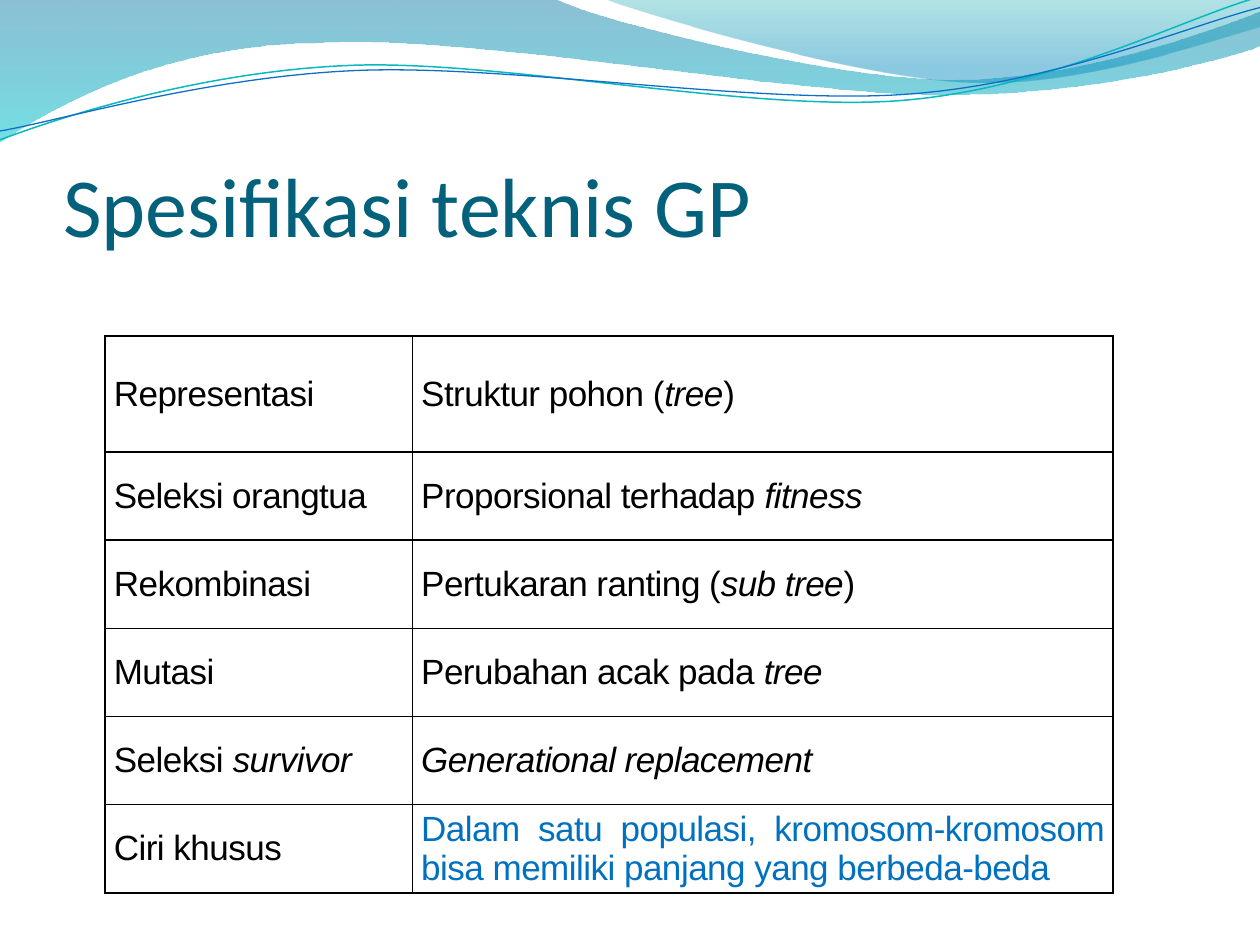
from lxml import etree
from pptx import Presentation
from pptx import util as u
from pptx.dml.color import RGBColor
from pptx.enum import text
from pptx.oxml import ns

TITLE = "Spesifikasi teknis GP"
BLACK = RGBColor(0, 0, 0)
BLUE = RGBColor(0x00, 0x70, 0xC0)
TITLE_TEAL = RGBColor(0x04, 0x61, 0x7B)
DEEP_BLUE = RGBColor(0x00, 0x74, 0xA1)
AQUA = RGBColor(0x00, 0xC6, 0xCF)
SEA_GREEN = RGBColor(0x00, 0xA1, 0xA9)
SKY_BLUE = RGBColor(0x00, 0x8B, 0xBF)
LINE_TEAL = RGBColor(0x0A, 0xB8, 0xBF)
LINE_BLUE = RGBColor(0x0F, 0x6F, 0xC6)

ROWS = [
    ("Representasi", "Struktur pohon (*tree*) ", BLACK),
    ("Seleksi orangtua", "Proporsional terhadap *fitness*", BLACK),
    ("Rekombinasi", "Pertukaran ranting (*sub tree*)", BLACK),
    ("Mutasi", "Perubahan acak pada *tree*", BLACK),
    ("Seleksi *survivor*", "*Generational replacement*", BLACK),
    ("Ciri khusus", "Dalam satu populasi, kromosom-kromosom bisa memiliki panjang yang berbeda-beda", BLUE),
]
COLUMN_WIDTHS = [2.44, 5.56]
ROW_HEIGHTS = [0.92] + [0.7] * 5

BANDS = [
    ([(0, -0.01), (4.4, -0.01), (4.76, 0.17, 6.64, 0.63, 7.58, 0.63),
      (8.53, 0.63, 9.58, 0.26, 10, 0.09), (10.01, 0.36),
      (9.83, 0.44, 8.7, 0.76, 7.46, 0.75), (6.22, 0.75, 3.82, 0.28, 2.57, 0.34),
      (1.29, 0.35, 0.46, 0.83, -0.01, 1.13)],
     [(0, DEEP_BLUE, 45), (1, AQUA, 55)]),
    ([(4.79, -0.01), (5.09, 0.11, 6.82, 0.62, 7.69, 0.65),
      (8.56, 0.69, 9.61, 0.32, 10, 0.21), (10, 0)],
     [(0, SEA_GREEN, 30), (0.8, SKY_BLUE, 45)]),
]
WAVES = [
    ([(0, 1.11), (0.48, 0.93, 1.58, 0.57, 2.77, 0.52),
      (3.95, 0.47, 5.93, 0.89, 7.13, 0.8), (8.33, 0.71, 9.38, 0.15, 9.98, -0.02)],
     LINE_TEAL, 0.85),
    ([(0, 1.04), (0.47, 0.96, 1.64, 0.61, 2.83, 0.56),
      (4.03, 0.51, 5.97, 0.83, 7.17, 0.75), (8.36, 0.67, 9.41, 0.21, 10, 0.06)],
     LINE_BLUE, 0.75),
]


def add_outline(page, segments, close):
    nodes = [(u.Inches(s[-2]), u.Inches(s[-1])) for s in segments]
    builder = page.shapes.build_freeform(*nodes[0], scale=1)
    builder.add_line_segments(nodes[1:], close=close)
    shape = builder.convert_to_shape()
    shape.shadow.inherit = False
    straight = list(shape._element.iter(ns.qn("a:lnTo")))
    for line, segment in zip(straight, segments[1:]):
        if len(segment) == 6:
            curve = etree.Element(ns.qn("a:cubicBezTo"))
            for x, y in zip(segment[::2], segment[1::2]):
                etree.SubElement(curve, ns.qn("a:pt"), x=str(u.Inches(x) - shape.left),
                                 y=str(u.Inches(y) - shape.top))
            line.getparent().replace(line, curve)
    return shape


def add_band(page, segments, stops):
    shape = add_outline(page, segments, True)
    shape.line.fill.background()
    shape.fill.gradient()
    shape.fill.gradient_angle = 270
    for stop, (position, color, _) in zip(shape.fill.gradient_stops, stops):
        stop.position = position
        stop.color.rgb = color
    for color, (_, _, opacity) in zip(shape._element.spPr.iter(ns.qn("a:srgbClr")), stops):
        etree.SubElement(color, ns.qn("a:alpha"), val=str(opacity * 1000))


def add_wave(page, segments, color, width):
    shape = add_outline(page, segments, False)
    shape.fill.background()
    shape.line.color.rgb = color
    shape.line.width = u.Pt(width)


def set_borders(cell):
    properties = cell._tc.get_or_add_tcPr()
    for side in ("lnL", "lnR", "lnT", "lnB"):
        line = etree.SubElement(properties, ns.qn("a:" + side), w=str(u.Pt(1)))
        fill = etree.SubElement(line, ns.qn("a:solidFill"))
        etree.SubElement(fill, ns.qn("a:srgbClr"), val=str(BLACK))


def fill_cell(cell, content, color):
    set_borders(cell)
    cell.fill.background()
    cell.vertical_anchor = text.MSO_ANCHOR.MIDDLE
    cell.margin_left = cell.margin_right = u.Inches(0.07)
    cell.margin_top = cell.margin_bottom = 0
    para = cell.text_frame.paragraphs[0]
    para.alignment = text.PP_ALIGN.JUSTIFY
    para.space_before, para.space_after = u.Pt(3), u.Pt(6)
    for index, part in enumerate(content.split("*")):
        if part:
            span = para.add_run()
            span.text = part
            span.font.name, span.font.size = "Arial", u.Pt(20)
            span.font.italic = index % 2 == 1
            span.font.color.rgb = color
            span._r.get_or_add_rPr().set("spc", "-30")


def add_title(page):
    title = page.shapes.title
    page.shapes._spTree.append(title._element)
    title.left, title.top = u.Inches(0.5), u.Inches(0.77)
    title.width, title.height = u.Inches(9), u.Inches(1.25)
    frame = title.text_frame
    frame.text = TITLE
    frame.vertical_anchor = text.MSO_ANCHOR.BOTTOM
    frame.auto_size = text.MSO_AUTO_SIZE.NONE
    frame.margin_left = frame.margin_right = frame.margin_bottom = 0
    frame.margin_top = u.Inches(0.05)
    para = frame.paragraphs[0]
    para.alignment = text.PP_ALIGN.LEFT
    font = para.runs[0].font
    font.name, font.size = "Calibri", u.Pt(48)
    font.color.rgb = TITLE_TEAL


def add_specification(page):
    table = page.shapes.add_table(
        len(ROWS), len(COLUMN_WIDTHS), u.Pt(60), u.Pt(192),
        u.Inches(sum(COLUMN_WIDTHS)), u.Inches(sum(ROW_HEIGHTS))).table
    table.first_row = table.horz_banding = False
    for column, width in zip(table.columns, COLUMN_WIDTHS):
        column.width = u.Inches(width)
    for row, height, (label, value, color) in zip(table.rows, ROW_HEIGHTS, ROWS):
        row.height = u.Inches(height)
        fill_cell(row.cells[0], label, BLACK)
        fill_cell(row.cells[1], value, color)


def main():
    deck = Presentation()
    deck.slide_width, deck.slide_height = u.Inches(10), u.Inches(7.5)
    page = deck.slides.add_slide(deck.slide_layouts[5])
    for band in BANDS:
        add_band(page, *band)
    for wave in WAVES:
        add_wave(page, *wave)
    add_title(page)
    add_specification(page)
    deck.save("out.pptx")


if __name__ == "__main__":
    main()
